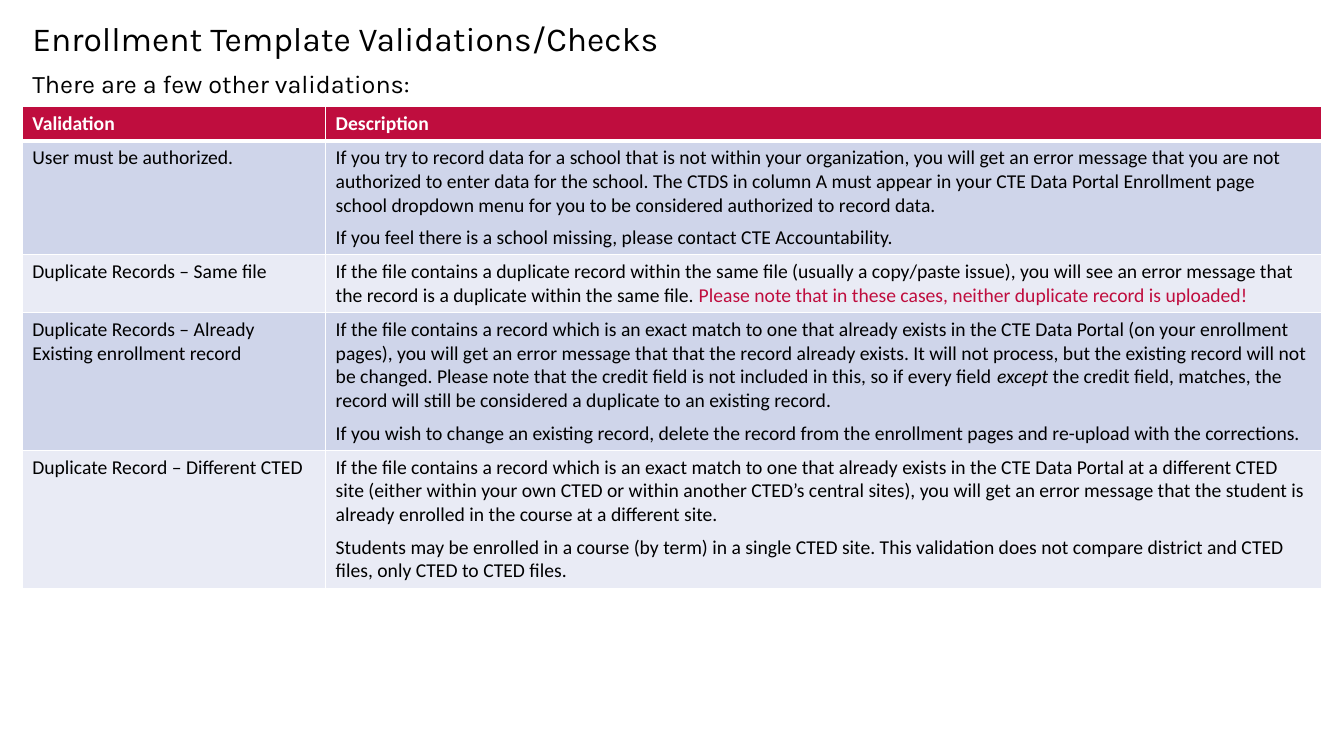
from dataclasses import dataclass

from lxml.etree import SubElement
from pptx import Presentation
from pptx.dml.color import RGBColor
from pptx.enum.text import MSO_ANCHOR as Anchor, PP_ALIGN as Align
from pptx.oxml.ns import qn
from pptx.util import Inches, Length, Pt

COLOURS = {
    "text": "000000",
    "white": "FFFFFF",
    "crimson": "BF0D3E",
    "odd_row": "CFD5EA",
    "even_row": "E9EBF5",
}
WIDTH, HEIGHT = Inches(13.33), Inches(7.5)
LEFT = 1.65  # positions and sizes are percentages of the slide
COLUMN_SHARES = (22.58, 74.12)
HEADER_SHARE = 4.4


@dataclass(frozen=True)
class Span:
    text: str
    italic: bool = False
    colour: str | None = None


@dataclass(frozen=True)
class Validation:
    name: str
    description: list[list[Span]]
    height: float


VALIDATIONS = [
    Validation("User must be authorized.", [
        [Span("If you try to record data for a school that is not within your organization, "
              "you will get an error message that you are not authorized to enter data for "
              "the school. The CTDS in column A must appear in your CTE Data Portal Enrollment "
              "page school dropdown menu for you to be considered authorized to record data.")],
        [Span("If you feel there is a school missing, please contact CTE Accountability.")],
    ], 14.93),
    Validation("Duplicate Records – Same file", [
        [Span("If the file contains a duplicate record within the same file (usually a "
              "copy/paste issue), you will see an error message that the record is a "
              "duplicate within the same file. "),
         Span("Please note that in these cases, neither duplicate record is uploaded!",
              colour="crimson")],
    ], 7.6),
    Validation("Duplicate Records – Already Existing enrollment record", [
        [Span("If the file contains a record which is an exact match to one that already "
              "exists in the CTE Data Portal (on your enrollment pages), you will get an error "
              "message that that the record already exists. It will not process, but the "
              "existing record will not be changed. Please note that the credit field is not "
              "included in this, so if every field "),
         Span("except ", italic=True),
         Span("the credit field, matches, the record will still be considered a duplicate "
              "to an existing record.")],
        [Span("If you wish to change an existing record, delete the record from the "
              "enrollment pages and re-upload with the corrections.")],
    ], 18),
    Validation("Duplicate Record – Different CTED", [
        [Span("If the file contains a record which is an exact match to one that already "
              "exists in the CTE Data Portal at a different CTED site (either within your own "
              "CTED or within another CTED’s central sites), you will get an error message "
              "that the student is already enrolled in the course at a different site.")],
        [Span("Students may be enrolled in a course (by term) in a single CTED site. This "
              "validation does not compare district and CTED files, only CTED to CTED files.")],
    ], 18),
]


def across(percent: float) -> Length:
    return Length(round(WIDTH * percent / 100))


def down(percent: float) -> Length:
    return Length(round(HEIGHT * percent / 100))


def colour(name: str) -> RGBColor:
    return RGBColor.from_string(COLOURS[name])


def set_font(para, name: str, size: float, shade: str, bold: bool = False) -> None:
    para.font.name, para.font.size, para.font.bold = name, Pt(size), bold
    para.font.color.rgb = colour(shade)


def fill_placeholder(box, text: str, size: float, top: float, width: float,
                     height: float) -> None:
    box.left, box.top = across(LEFT), down(top)
    box.width, box.height = across(width), down(height)
    frame = box.text_frame
    frame.text, frame.word_wrap = text, True
    frame.vertical_anchor = Anchor.TOP
    para = frame.paragraphs[0]
    para.alignment, para.space_before = Align.LEFT, Pt(0)
    properties = para._p.get_or_add_pPr()
    properties.set("marL", "0")
    properties.set("indent", "0")
    SubElement(properties, qn("a:buNone"))
    set_font(para, "Karla", size, "text")


def add_borders(cell, top: float, bottom: float) -> None:
    properties = cell._tc.get_or_add_tcPr()
    for side, points in (("L", 1), ("R", 1), ("T", top), ("B", bottom)):
        line = SubElement(properties, qn(f"a:ln{side}"), w=str(Pt(points)))
        SubElement(SubElement(line, qn("a:solidFill")), qn("a:srgbClr"), val=COLOURS["white"])


def fill_cell(cell, paragraphs: list[list[Span]], background: str, shade: str = "text",
              bold: bool = False, gap: float = 0, top: float = 1, bottom: float = 1) -> None:
    add_borders(cell, top, bottom)
    cell.fill.solid()
    cell.fill.fore_color.rgb = colour(background)
    frame = cell.text_frame
    for index, spans in enumerate(paragraphs):
        para = frame.add_paragraph() if index else frame.paragraphs[0]
        para.space_after = Pt(gap)
        set_font(para, "Calibri", 14, shade, bold)
        for span in spans:
            run = para.add_run()
            run.text = span.text
            if span.italic:
                run.font.italic = True
            if span.colour:
                run.font.color.rgb = colour(span.colour)


def add_validation_table(page) -> None:
    heights = [HEADER_SHARE] + [validation.height for validation in VALIDATIONS]
    table = page.shapes.add_table(
        len(heights), len(COLUMN_SHARES), across(LEFT), down(14.13),
        across(sum(COLUMN_SHARES)), down(sum(heights))).table
    for column, share in zip(table.columns, COLUMN_SHARES):
        column.width = across(share)
    for row, share in zip(table.rows, heights):
        row.height = down(share)
    for index, heading in enumerate(("Validation", "Description")):
        fill_cell(table.cell(0, index), [[Span(heading)]], "crimson", "white", True, bottom=3)
    for index, validation in enumerate(VALIDATIONS, start=1):
        background = "odd_row" if index % 2 else "even_row"
        top = 3 if index == 1 else 1
        fill_cell(table.cell(index, 0), [[Span(validation.name)]], background, top=top)
        fill_cell(table.cell(index, 1), validation.description, background, gap=6, top=top)


def main() -> None:
    deck = Presentation()
    deck.slide_width, deck.slide_height = WIDTH, HEIGHT
    page = deck.slides.add_slide(deck.slide_layouts[1])
    title, body = page.placeholders
    fill_placeholder(title, "Enrollment Template Validations/Checks", 24, 1.73, 87.25, 6.67)
    fill_placeholder(body, "There are a few other validations:", 18, 8.4, 92.05, 9.47)
    add_validation_table(page)
    deck.save("out.pptx")


if __name__ == "__main__":
    main()
